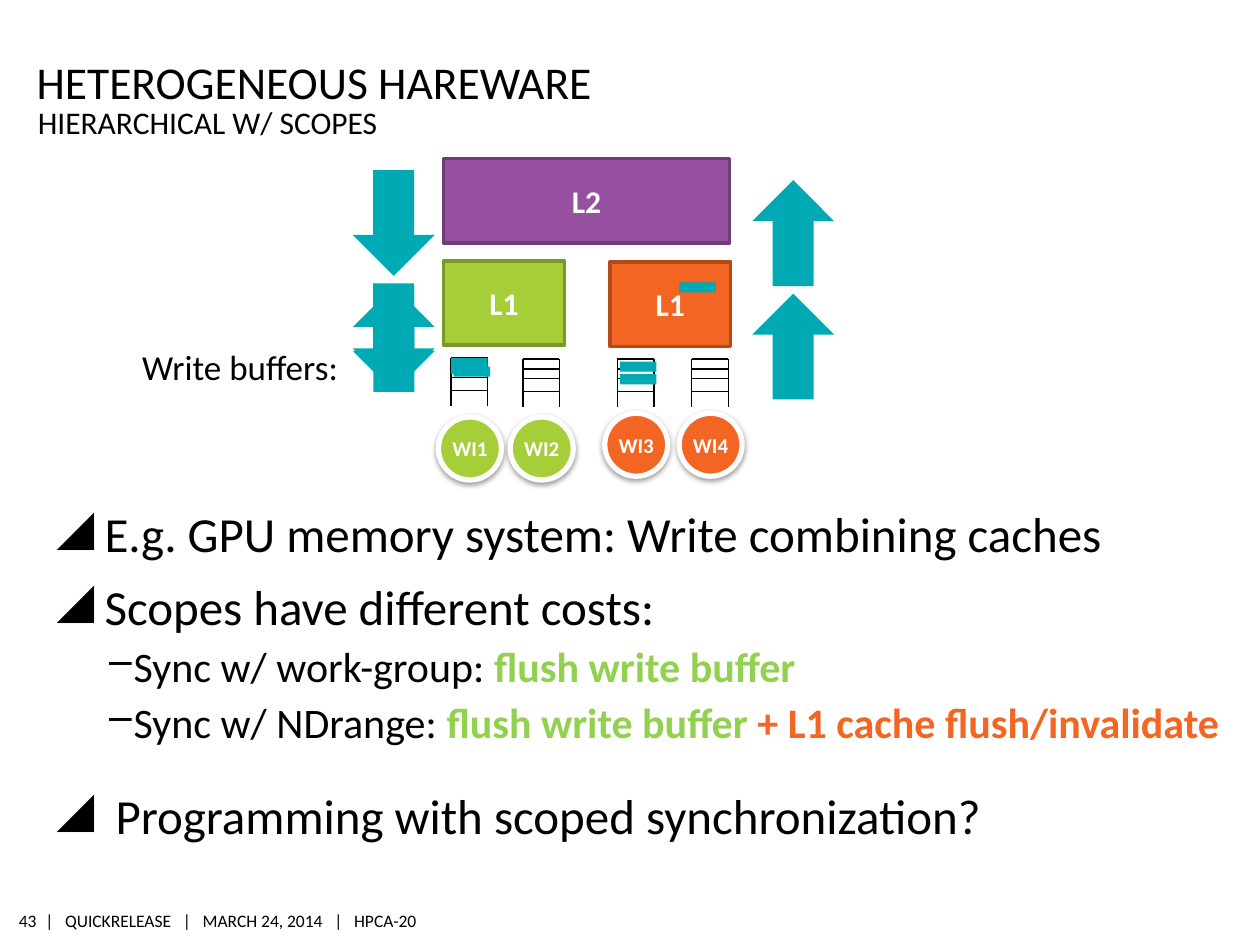
from lxml import etree
from pptx import Presentation
from pptx import util as u
from pptx.dml.color import RGBColor
from pptx.enum import shapes, text
from pptx.oxml.ns import qn

COLS, ROWS = 100, 75
CELL = u.Inches(0.1)
FONT = "Calibri"
C = {"black": "000000", "white": "FFFFFF", "teal": "00AAB5",
     "green": "A6CE39", "green_line": "7B982A", "orange": "F26522",
     "orange_line": "B34B19", "purple": "9650A0", "purple_line": "703C78",
     "lime": "92D050"}


def cells(*values):
    return [round(v * CELL) for v in values]


def rgb(name):
    return RGBColor.from_string(C[name])


def style(r, size, color="black", bold=False):
    r.font.name, r.font.size, r.font.bold = FONT, u.Pt(size), bold
    r.font.color.rgb = rgb(color)


def frame(sp, margins=(0, 0, 0, 0), anchor=text.MSO_ANCHOR.MIDDLE, wrap=True):
    """Set margins (left, top, right, bottom, in cells), anchor and wrapping."""
    tf = sp.text_frame
    (tf.margin_left, tf.margin_top,
     tf.margin_right, tf.margin_bottom) = cells(*margins)
    tf.vertical_anchor, tf.word_wrap = anchor, wrap
    return tf


def label(s, box, wording, size, margins, wrap=False,
          anchor=text.MSO_ANCHOR.MIDDLE, align=text.PP_ALIGN.LEFT):
    tf = frame(s.shapes.add_textbox(*cells(*box)), margins, anchor, wrap)
    tf.text = wording
    p = tf.paragraphs[0]
    p.alignment = align
    style(p.runs[0], size)
    return p


def block(s, kind, box, fill, line=None, width=2, wording="", size=18):
    sp = s.shapes.add_shape(kind, *cells(*box))
    sp.shadow.inherit = False
    sp.fill.solid()
    sp.fill.fore_color.rgb = rgb(fill)
    if line:
        sp.line.color.rgb, sp.line.width = rgb(line), u.Pt(width)
    else:
        sp.line.fill.background()
    if wording:
        tf = frame(sp)
        tf.text = wording
        tf.paragraphs[0].alignment = text.PP_ALIGN.CENTER
        style(tf.paragraphs[0].runs[0], size, "white", True)
    return sp


def work_item(s, box, color, name):
    sp = block(s, shapes.MSO_SHAPE.OVAL, box, color, "white", 3, name, 12)
    effects = sp._element.spPr.find(qn("a:effectLst"))
    shadow = etree.SubElement(effects, qn("a:outerShdw"), blurRad=str(u.Pt(3.1)),
                              dist=str(u.Pt(1.6)), dir="5400000", rotWithShape="0")
    black = etree.SubElement(shadow, qn("a:srgbClr"), val=C["black"])
    etree.SubElement(black, qn("a:alpha"), val="38000")


def write_buffer(s, box):
    """Draw a queue open at the bottom: two rails and four rungs."""
    x, y, w, h = box
    rails = [(rx, y + h, rx, y) for rx in (x, x + w)]
    rungs = [(x + w, y + d * h, x, y + d * h) for d in (0, 0.21, 0.41, 0.68)]
    for ends in rails + rungs:
        ln = s.shapes.add_connector(shapes.MSO_CONNECTOR.STRAIGHT, *cells(*ends))
        ln.line.color.rgb, ln.line.width = rgb("black"), u.Pt(0.75)
        etree.SubElement(ln._element.spPr, qn("a:effectLst"))


def work_group(s, box, color, names, pitch, buffer_tops, item_top):
    """Draw an L1 cache in the box, with a buffer and work item per name below."""
    x = box[0]
    block(s, shapes.MSO_SHAPE.RECTANGLE, box, color, color + "_line", wording="L1")
    for i, (name, top) in enumerate(zip(names, buffer_tops)):
        write_buffer(s, (x + 0.6 + i * pitch, top, 2.9, 3.8))
        work_item(s, (x - 0.4 + i * pitch, item_top, 5, 5), color, name)


def arrow(s, box, up=False):
    sp = block(s, shapes.MSO_SHAPE.DOWN_ARROW, box, "teal")
    sp.rotation = 180 if up else 0


def memory_system(s, box):
    x, y, w, h = box
    l1_w, l1_y = 9.6, y + 8.1
    work_group(s, (x, l1_y, l1_w, h), "green", ("WI1", "WI2"), 5.7, (28.4, 28.5), 33.1)
    work_group(s, (x + w - l1_w + 0.1, l1_y + 0.1, l1_w, h), "orange",
               ("WI3", "WI4"), 5.9, (28.5, 28.5), 32.8)
    block(s, shapes.MSO_SHAPE.RECTANGLE, box, "purple", "purple_line", wording="L2")


def data_movement(s):
    for left, top in ((35.8, 28.4), (36, 29.1), (35.8, 28.9),
                      (49.2, 28.7), (49.2, 29.7), (53.9, 22.4)):
        block(s, shapes.MSO_SHAPE.RECTANGLE, (left, top, 2.9, 0.8), "teal")
    for left, top, up in ((28, 22.7, True), (28, 22.7, False),
                          (59.7, 23.3, True), (59.7, 14.3, True),
                          (28, 22.5, False), (28, 13.5, False)):
        arrow(s, (left, top, 6.5, 8.4), up)


def bullet(p, mark, left, hang):
    pPr = p._p.get_or_add_pPr()
    pPr.set("marL", str(u.Inches(left)))
    pPr.set("indent", str(-u.Inches(hang)))
    color = etree.SubElement(pPr, qn("a:buClr"))
    etree.SubElement(color, qn("a:srgbClr"), val=C["black"])
    etree.SubElement(pPr, qn("a:buChar"), char=mark)


def points(s, box):
    tf = frame(s.shapes.add_textbox(*cells(*box)), (0, 0.5, 0, 0.5),
               text.MSO_ANCHOR.TOP)
    items = [
        (0, 8, [("E.g. GPU memory system: Write combining caches", "black")]),
        (0, 8, [("Scopes have different costs:", "black")]),
        (1, 3, [("Sync w/ work-group: ", "black"), ("flush write buffer", "lime")]),
        (1, 3, [("Sync w/ NDrange: ", "black"), ("flush write buffer ", "lime"),
                ("+ L1 cache flush/invalidate", "orange")]),
        (0, 22, [(" Programming with scoped synchronization?", "black")]),
    ]
    levels = [("◢", 0.38, 0.38, 28), ("‒", 0.6, 0.2, 24)]
    for i, (level, before, runs) in enumerate(items):
        p = tf.add_paragraph() if i else tf.paragraphs[0]
        mark, left, hang, size = levels[level]
        p.level, p.space_before = level, u.Pt(before)
        bullet(p, mark, left, hang)
        for wording, color in runs:
            r = p.add_run()
            r.text = wording
            style(r, size, color, color != "black")


def heading(s, box):
    x, y, w, h = box
    title = s.shapes.title
    title.left, title.top, title.width, title.height = cells(x, y, w, h)
    tf = frame(title, (0, 0.5, 0, 0), text.MSO_ANCHOR.BOTTOM)
    tf.text = "HETEROGENEOUS HAREWARE"
    tf.auto_size = text.MSO_AUTO_SIZE.NONE
    tf.paragraphs[0].alignment = text.PP_ALIGN.LEFT
    style(tf.paragraphs[0].runs[0], 26)
    label(s, (x + 0.1, y + 4.8, w, 3.1), "HIERARCHICAL W/ SCOPES", 18,
          (0, 0, 0, 0), True, text.MSO_ANCHOR.TOP)


def footer(s, box):
    x, y, w, h = box
    margins = (0, 0.4, 0, 0.4)
    label(s, (x, y, 1.6, h), "43", 10, margins, align=text.PP_ALIGN.RIGHT)
    label(s, (x + 2.3, y, w - 2.3, h),
          "|   QUICKRELEASE   |   MARCH 24, 2014   |   HPCA-20", 10, margins)


def main():
    prs = Presentation()
    prs.slide_width, prs.slide_height = cells(COLS, ROWS)
    s = prs.slides.add_slide(prs.slide_layouts[5])
    footer(s, (1.3, 71.8, 33.1, 2.6))
    heading(s, (2.9, 3.4, 84, 5.2))
    points(s, (4.5, 39.5, 93.4, 28.9))
    memory_system(s, (35.2, 12.6, 22.7, 6.7))
    data_movement(s)
    p = label(s, (10.3, 27.3, 17.8, 4), "Write buffers:", 20, (1, 0.5, 1, 0.5))
    p.line_spacing, p.space_before, p.space_after = 0.9, u.Pt(3), u.Pt(3)
    prs.save("out.pptx")


if __name__ == "__main__":
    main()
